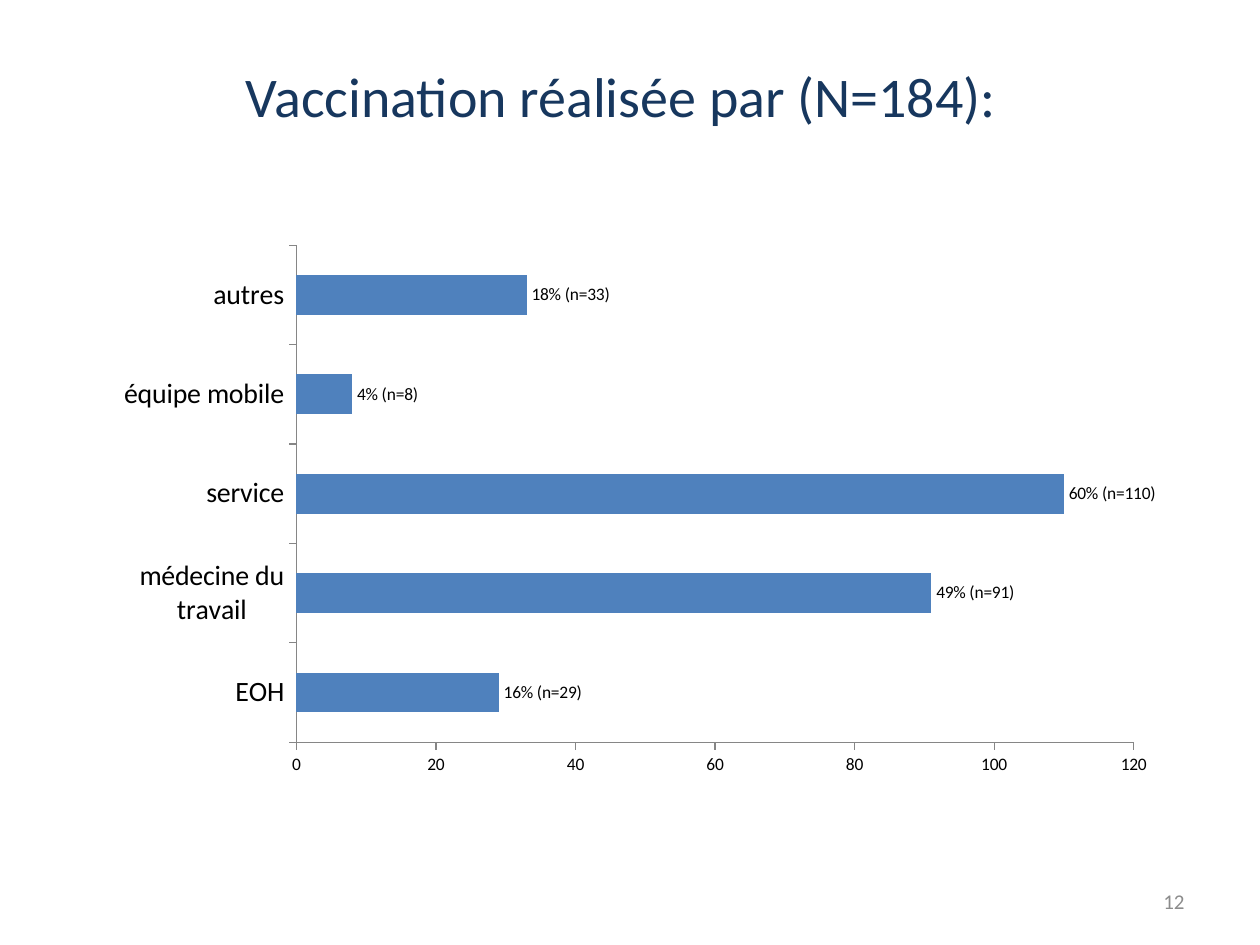
from lxml import etree
from pptx import Presentation
from pptx.chart.data import CategoryChartData
from pptx.dml.color import RGBColor
from pptx.enum.chart import XL_CHART_TYPE, XL_LABEL_POSITION, XL_TICK_MARK
from pptx.enum.text import MSO_ANCHOR, PP_ALIGN
from pptx.oxml.ns import qn
from pptx.util import Cm, Pt

FONT = "Calibri"
NAVY = RGBColor(0x17, 0x37, 0x5E)
BLUE = RGBColor(0x4F, 0x81, 0xBD)
GREY = RGBColor(0x8C, 0x8C, 0x8C)
AXIS_GREY = RGBColor(0x86, 0x86, 0x86)
BLACK = RGBColor(0, 0, 0)

# category, number vaccinated, share in %
VACCINATORS = [
    ("EOH", 29, 16),
    ("médecine du travail", 91, 49),
    ("service", 110, 60),
    ("équipe mobile", 8, 4),
    ("autres", 33, 18),
]


def set_font(font, size, color):
    font.name = FONT
    font.size = Pt(size)
    font.color.rgb = color


def add_text(s, text, box, size, color, align=PP_ALIGN.LEFT, anchor=MSO_ANCHOR.TOP):
    tf = s.shapes.add_textbox(*map(Cm, box)).text_frame
    tf.word_wrap = True
    tf.vertical_anchor = anchor
    p = tf.paragraphs[0]
    p.text = text
    p.alignment = align
    set_font(p.font, size, color)


def set_plot_layout(chart, x, y, w, h):
    """Fix the inner plot area, in fractions of the chart."""
    plot_area = chart._chartSpace.chart.plotArea
    for old in plot_area.findall(qn("c:layout")):
        plot_area.remove(old)
    layout = etree.Element(qn("c:layout"))
    manual = etree.SubElement(layout, qn("c:manualLayout"))
    settings = [("layoutTarget", "inner"), ("xMode", "edge"), ("yMode", "edge"),
                ("x", x), ("y", y), ("w", w), ("h", h)]
    for tag, val in settings:
        etree.SubElement(manual, qn(f"c:{tag}")).set("val", str(val))
    plot_area.insert(0, layout)


def style_axis(axis, size):
    axis.has_major_gridlines = False
    axis.major_tick_mark = XL_TICK_MARK.OUTSIDE
    axis.minor_tick_mark = XL_TICK_MARK.NONE
    axis.format.line.color.rgb = AXIS_GREY
    axis.format.line.width = Pt(0.75)
    set_font(axis.tick_labels.font, size, BLACK)


def label_bars(plot):
    plot.has_data_labels = True
    plot.data_labels.show_value = True
    plot.data_labels.position = XL_LABEL_POSITION.OUTSIDE_END
    for point, (_, n, share) in zip(plot.series[0].points, VACCINATORS):
        label = point.data_label
        p = label.text_frame.paragraphs[0]
        r = p.add_run()
        r.text = f"{share}% (n={n})"
        set_font(r.font, 10, BLACK)
        label.position = XL_LABEL_POSITION.OUTSIDE_END


def add_bar_chart(s, box):
    data = CategoryChartData()
    data.categories = [name for name, _, _ in VACCINATORS]
    data.add_series("Series 1", [n for _, n, _ in VACCINATORS])
    chart = s.shapes.add_chart(XL_CHART_TYPE.BAR_CLUSTERED, *map(Cm, box), data).chart
    chart.has_legend = False
    chart.has_title = False
    set_font(chart.font, 10, BLACK)
    set_plot_layout(chart, 0.16, 0, 0.8, 0.88)

    style_axis(chart.category_axis, 16)
    style_axis(chart.value_axis, 10)
    chart.value_axis.minimum_scale = 0
    chart.value_axis.maximum_scale = 120
    chart.value_axis.major_unit = 20

    plot = chart.plots[0]
    plot.gap_width = 150
    plot.vary_by_categories = False
    fill = plot.series[0].format.fill
    fill.solid()
    fill.fore_color.rgb = BLUE
    label_bars(plot)


def main():
    prs = Presentation()
    prs.slide_width, prs.slide_height = Cm(25.4), Cm(19.05)
    s = prs.slides.add_slide(prs.slide_layouts[6])
    add_text(s, "12", (18.2, 17.66, 5.93, 1.01), 12, GREY, PP_ALIGN.RIGHT, MSO_ANCHOR.MIDDLE)
    add_text(s, "Vaccination réalisée par (N=184):", (4.7, 1.12, 17.2, 1.63), 32, NAVY)
    add_bar_chart(s, (2.5, 4.93, 21.2, 11.4))
    prs.save("out.pptx")


if __name__ == "__main__":
    main()
